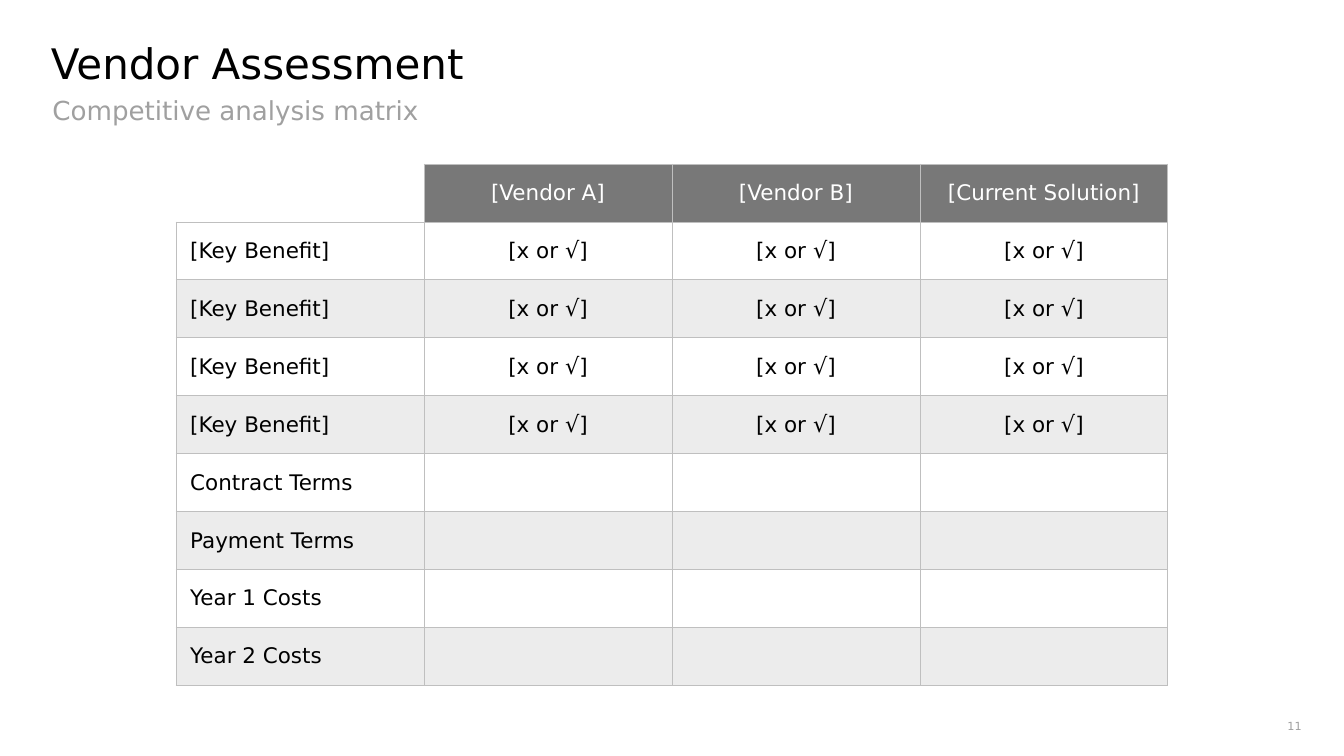
"""Build the vendor assessment slide with its competitive analysis matrix."""
from lxml import etree
from pptx import Presentation
from pptx.dml.color import RGBColor
from pptx.enum import text
from pptx.oxml.ns import qn
from pptx.util import Inches, Pt

TITLE = "Vendor Assessment"
SUBTITLE = "Competitive analysis matrix"
PAGE_NUMBER = "11"
VENDORS = ["[Vendor A]", "[Vendor B]", "[Current Solution]"]
BENEFITS = ["[Key Benefit]"] * 4
TERMS = ["Contract Terms", "Payment Terms", "Year 1 Costs", "Year 2 Costs"]
RATING = [("[x or ", 23), ("√", 24), ("]", 23)]

COLORS = {"black": "000000", "white": "FFFFFF", "muted": "A0A0A0",
          "header": "787878", "band": "ECECEC", "border": "BFBFBF"}
FONT = "DejaVu Sans"
COLUMN_WIDTH, ROW_HEIGHT = 3.69, 7.76 / 9
LEFT, CENTER, RIGHT = text.PP_ALIGN.LEFT, text.PP_ALIGN.CENTER, text.PP_ALIGN.RIGHT
TOP, MIDDLE = text.MSO_ANCHOR.TOP, text.MSO_ANCHOR.MIDDLE


def write(frame, content, size=23, color="black", align=LEFT, spacing=None):
    paragraph = frame.paragraphs[0]
    paragraph.alignment = align
    if spacing:
        paragraph.line_spacing = spacing
    runs = [(content, size)] if isinstance(content, str) else content
    for words, points in runs:
        run = paragraph.add_run()
        run.text = words
        run.font.name = FONT
        run.font.size = Pt(points)
        run.font.color.rgb = RGBColor.from_string(COLORS[color])


def add_label(slide, content, box, anchor=MIDDLE, inset=0.1, **style):
    frame = slide.shapes.add_textbox(*map(Inches, box)).text_frame
    frame.word_wrap = True
    frame.vertical_anchor = anchor
    frame.margin_left = frame.margin_right = Inches(inset)
    write(frame, content, **style)


def set_borders(cell, sides):
    properties = cell._tc.get_or_add_tcPr()
    for position, side in enumerate("LRTB"):
        line = etree.Element(qn(f"a:ln{side}"), w=str(Pt(1)))
        if side in sides:
            fill = etree.SubElement(line, qn("a:solidFill"))
            etree.SubElement(fill, qn("a:srgbClr"), val=COLORS["border"])
        else:
            etree.SubElement(line, qn("a:noFill"))
        properties.insert(position, line)


def add_matrix(slide):
    rows = [[""] + VENDORS]
    rows += [[benefit] + [RATING] * len(VENDORS) for benefit in BENEFITS]
    rows += [[term] + [""] * len(VENDORS) for term in TERMS]
    matrix = slide.shapes.add_table(
        len(rows), len(rows[0]), Inches(2.62), Inches(2.44),
        Inches(COLUMN_WIDTH * len(rows[0])), Inches(ROW_HEIGHT * len(rows))).table
    for column in matrix.columns:
        column.width = Inches(COLUMN_WIDTH)
    for r, row in enumerate(rows):
        matrix.rows[r].height = Inches(ROW_HEIGHT)
        for c, content in enumerate(row):
            cell = matrix.cell(r, c)
            is_corner = r == c == 0
            is_header = r == 0 and c > 0
            background = "header" if is_header else "white" if r == 0 or r % 2 else "band"
            cell.fill.solid()
            cell.fill.fore_color.rgb = RGBColor.from_string(COLORS[background])
            cell.vertical_anchor = MIDDLE
            cell.margin_left = cell.margin_right = Inches(0.21)
            cell.margin_top = cell.margin_bottom = Inches(0.11)
            set_borders(cell, "RB" if is_corner else "LRTB")
            if content:
                write(cell.text_frame, content, align=CENTER if c else LEFT,
                      color="white" if is_header else "black")


def main():
    deck = Presentation()
    deck.slide_width, deck.slide_height = Inches(20), Inches(11.25)
    slide = deck.slides.add_slide(deck.slide_layouts[6])
    add_label(slide, SUBTITLE, (0.66, 1.44, 18.68, 0.4), inset=0.12, size=28, color="muted")
    add_label(slide, TITLE, (0.66, 0.6, 18.68, 0.8), anchor=TOP, size=45, spacing=0.9)
    add_label(slide, PAGE_NUMBER, (18.91, 10.68, 0.56, 0.26), size=12, color="muted", align=RIGHT)
    add_matrix(slide)
    deck.save("out.pptx")


if __name__ == "__main__":
    main()
